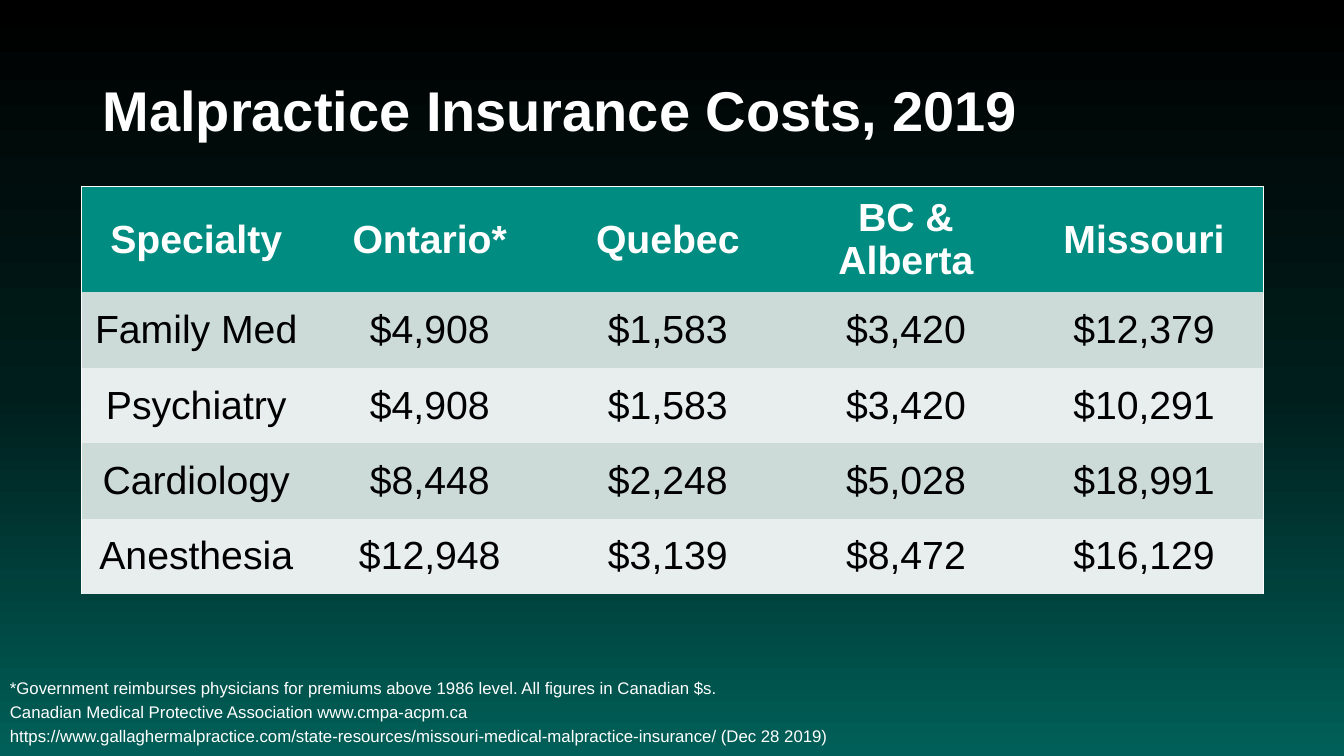
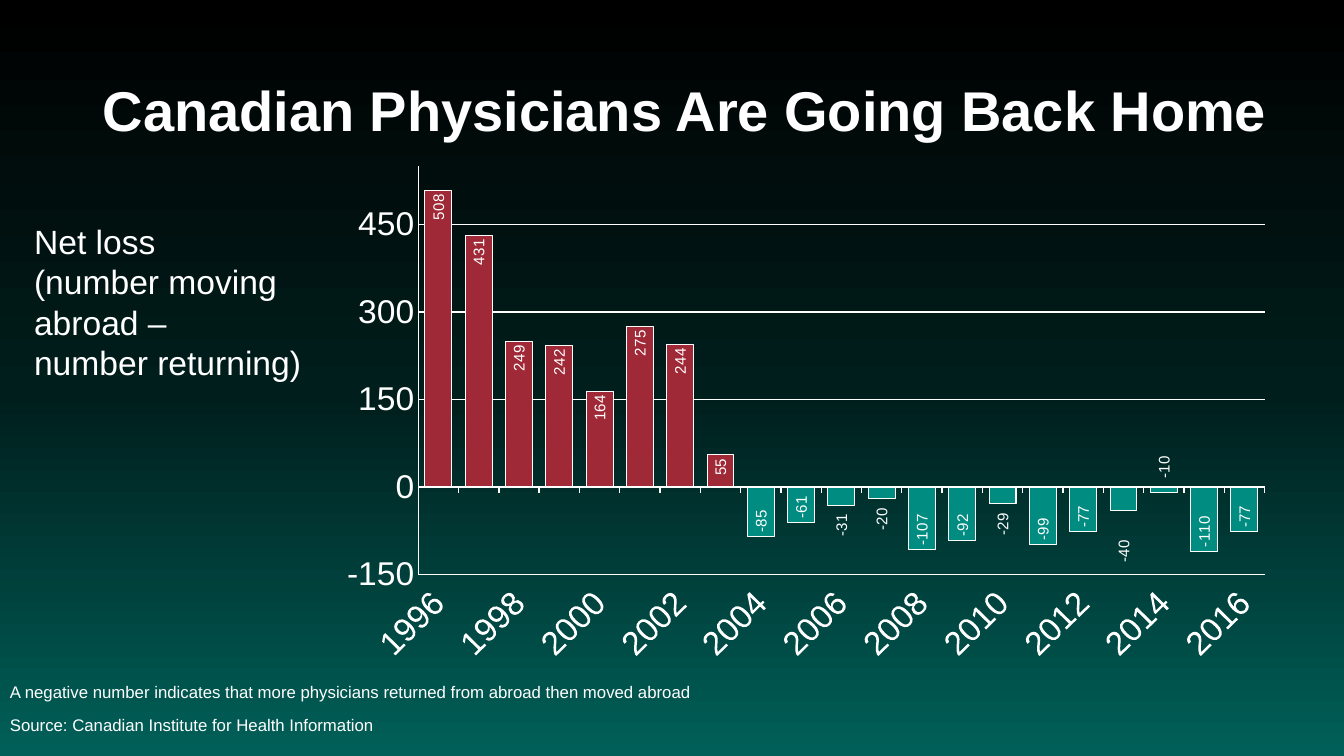
from copy import deepcopy
from dataclasses import dataclass, field
from typing import Any

from pptx import Presentation
from pptx.chart.data import CategoryChartData
from pptx.dml.color import RGBColor
from pptx.enum.chart import XL_CHART_TYPE, XL_LABEL_POSITION, XL_TICK_LABEL_POSITION, XL_TICK_MARK
from pptx.enum.text import MSO_ANCHOR, PP_ALIGN
from pptx.oxml import parse_xml
from pptx.oxml.ns import nsdecls, qn
from pptx.util import Cm, Pt

FONT = "Arial"
WHITE, BLACK = "FFFFFF", "000000"
TEAL, RED = "008C81", "9F2936"
BANDS = ("CCDAD8", "E7EEED")
STOPS = ((0, BLACK), (52, "001E1C"), (100, "006059"))
NO_STYLE = "{2D5ABB26-0587-4C30-8999-92F81FD0307C}"
NO_LEADS = (
    f'<c:extLst {nsdecls("c")}><c:ext uri="{{CE6537A1-D6FC-4f65-9D91-7224C49458BB}}" '
    'xmlns:c15="http://schemas.microsoft.com/office/drawing/2012/chart">'
    '<c15:showLeaderLines val="0"/></c:ext></c:extLst>')


@dataclass(frozen=True)
class Box:
    left: float
    top: float
    width: float
    height: float

    def lengths(self) -> tuple:
        return tuple(Cm(n) for n in (self.left, self.top, self.width, self.height))


@dataclass(frozen=True)
class Style:
    box: Box
    size: int
    bold: bool = False
    anchor: Any = MSO_ANCHOR.MIDDLE
    format: dict = field(default_factory=dict)


TITLE = Style(Box(2.34, 1.02, 30.96, 3.68), 40, True, format={"line_spacing": 0.9})
FOOT = Box(0, 16.71, 22.86, 2.34)
NOTE = Style(FOOT, 12, format={"line_spacing": 1.2})
SOURCE = Style(FOOT, 12, format={"line_spacing": 0.9, "space_before": Pt(10)})
SIDE = Style(Box(0.61, 5.44, 7.59, 4.37), 24, anchor=MSO_ANCHOR.TOP)
CHART = Box(8.56, 3.61, 23.83, 13.08)
PLOT = Box(10.54, 4.2, 21.33, 10.5)

COSTS = (
    ("Specialty", "Ontario*", "Quebec", "BC & Alberta", "Missouri"),
    ("Family Med", "$4,908", "$1,583", "$3,420", "$12,379"),
    ("Psychiatry", "$4,908", "$1,583", "$3,420", "$10,291"),
    ("Cardiology", "$8,448", "$2,248", "$5,028", "$18,991"),
    ("Anesthesia", "$12,948", "$3,139", "$8,472", "$16,129"),
)
LOSSES = (508, 431, 249, 242, 164, 275, 244, 55, -85, -61, -31, -20, -107,
          -92, -29, -99, -77, -40, -10, -110, -77)
DROPS = {10: 0.07, 11: 0.07, 14: 0.07, 17: 0.11, 18: -0.02}


def shade(code: str) -> RGBColor:
    return RGBColor.from_string(code)


def apply(target: Any, values: dict) -> None:
    for name, value in values.items():
        setattr(target, name, value)


def dress(font: Any, size: int, code: str = WHITE, bold: bool = False) -> None:
    apply(font, {"name": FONT, "size": Pt(size), "bold": bold})
    font.color.rgb = shade(code)


def paint(target: Any, code: str) -> None:
    target.fill.solid()
    target.fill.fore_color.rgb = shade(code)


def rule(line: Any, width: float = 0.75) -> None:
    line.color.rgb = shade(WHITE)
    line.width = Pt(width)


def backdrop(deck: Any) -> None:
    fill = deck.slide_master.background.fill
    fill.gradient()
    fill.gradient_angle = 270
    stops = deck.slide_master.element.find(".//" + qn("a:gsLst"))
    for stop in list(stops):
        stops.remove(stop)
    for place, code in STOPS:
        stops.append(parse_xml(
            f'<a:gs {nsdecls("a")} pos="{place * 1000}"><a:srgbClr val="{code}"/></a:gs>'))


def write(slide: Any, style: Style, *lines: str) -> None:
    frame = slide.shapes.add_textbox(*style.box.lengths()).text_frame
    apply(frame, {"word_wrap": True, "vertical_anchor": style.anchor})
    for spot, line in enumerate(lines):
        para = frame.add_paragraph() if spot else frame.paragraphs[0]
        apply(para, style.format)
        if not spot:
            para.space_before = Pt(0)
        run = para.add_run()
        run.text = line
        dress(run.font, style.size, bold=style.bold)


def edge(cell: Any, sides: str) -> None:
    props = cell._tc.get_or_add_tcPr()
    for spot, side in enumerate(sides):
        props.insert(spot, parse_xml(
            f'<a:ln{side} {nsdecls("a")} w="9525"><a:solidFill>'
            f'<a:srgbClr val="{WHITE}"/></a:solidFill></a:ln{side}>'))


def grid(slide: Any) -> None:
    rows, cols = len(COSTS), len(COSTS[0])
    box = Box(2.06, 4.7, 29.77, 10.27)
    table = slide.shapes.add_table(rows, cols, *box.lengths()).table
    apply(table, {"first_row": False, "horz_banding": False})
    table._tbl.tblPr.find(qn("a:tableStyleId")).text = NO_STYLE
    for c, col in enumerate(table.columns):
        col.width = Cm(6 if c else 5.77)
    for r, row in enumerate(table.rows):
        row.height = Cm(1.9 if r else 2.67)
        for c, cell in enumerate(row.cells):
            apply(cell, {"margin_left": 0, "margin_right": 0,
                         "vertical_anchor": MSO_ANCHOR.MIDDLE})
            paint(cell, BANDS[(r - 1) % 2] if r else TEAL)
            sides = ("" if c else "L") + ("R" if c == cols - 1 else "") + ("" if r else "T")
            edge(cell, sides)
            para = cell.text_frame.paragraphs[0]
            para.alignment = PP_ALIGN.CENTER
            run = para.add_run()
            run.text = COSTS[r][c]
            dress(run.font, 28, BLACK if r else WHITE, not r)


def layout(sizes: dict, inner: bool = False) -> Any:
    modes = ('<c:layoutTarget val="inner"/><c:xMode val="edge"/><c:yMode val="edge"/>'
             if inner else "")
    parts = "".join(f'<c:{key} val="{size}"/>' for key, size in sizes.items())
    return parse_xml(f'<c:layout {nsdecls("c")}><c:manualLayout>{modes}'
                     f'{parts}</c:manualLayout></c:layout>')


def label(series: Any) -> None:
    labels = series.data_labels
    apply(labels, {"show_value": True, "position": XL_LABEL_POSITION.INSIDE_END})
    dress(labels.font, 11)
    root = labels._element
    text = root.find(qn("c:txPr"))
    text.find(qn("a:bodyPr")).attrib.update({"rot": "-5400000", "vert": "horz"})
    for spot in DROPS:
        series.points[spot].data_label.position = XL_LABEL_POSITION.INSIDE_END
    for item, drop in zip(root.findall(qn("c:dLbl")), DROPS.values()):
        for old in item.findall(qn("c:txPr")):
            item.remove(old)
        item.find(qn("c:idx")).addnext(layout({"x": 0, "y": drop}))
        item.find(qn("c:dLblPos")).addprevious(deepcopy(text))
    for lead in root.findall(qn("c:showLeaderLines")):
        lead.set("val", "0")
    root.append(parse_xml(NO_LEADS))


def graph(slide: Any) -> None:
    data = CategoryChartData()
    data.categories = [str(1996 + n) for n in range(len(LOSSES))]
    data.add_series("Series 1", LOSSES)
    chart = slide.shapes.add_chart(
        XL_CHART_TYPE.COLUMN_CLUSTERED, *CHART.lengths(), data).chart
    apply(chart, {"has_legend": False, "has_title": False})
    dress(chart.font, 24)
    area = chart._chartSpace.find(".//" + qn("c:plotArea"))
    for old in area.findall(qn("c:layout")):
        area.remove(old)
    area.insert(0, layout({"x": (PLOT.left - CHART.left) / CHART.width,
                           "y": (PLOT.top - CHART.top) / CHART.height,
                           "w": PLOT.width / CHART.width,
                           "h": PLOT.height / CHART.height}, True))

    years, scale = chart.category_axis, chart.value_axis
    apply(years, {"tick_label_position": XL_TICK_LABEL_POSITION.LOW,
                  "major_tick_mark": XL_TICK_MARK.OUTSIDE,
                  "has_major_gridlines": False})
    apply(scale, {"minimum_scale": -150, "maximum_scale": 550, "major_unit": 150,
                  "major_tick_mark": XL_TICK_MARK.NONE, "has_major_gridlines": True})
    apply(scale.tick_labels, {"number_format": "#,##0", "number_format_is_linked": False})
    rule(years.format.line, 1)
    rule(scale.format.line)
    rule(scale.major_gridlines.format.line)
    for axis in (years, scale):
        dress(axis.tick_labels.font, 24)
    years._element.find(".//" + qn("a:bodyPr")).attrib.update(
        {"rot": "-2700000", "vert": "horz"})

    plot = chart.plots[0]
    apply(plot, {"gap_width": 50, "overlap": -5, "vary_by_categories": False})
    series = plot.series[0]
    series.invert_if_negative = False
    paint(series.format, TEAL)
    rule(series.format.line)
    for spot, loss in enumerate(LOSSES):
        if loss > 0:
            look = series.points[spot].format
            paint(look, RED)
            rule(look.line)
    label(series)


def main() -> None:
    deck = Presentation()
    apply(deck, {"slide_width": Cm(33.87), "slide_height": Cm(19.05)})
    backdrop(deck)
    blank = deck.slide_layouts[6]

    costs = deck.slides.add_slide(blank)
    write(costs, TITLE, "Malpractice Insurance Costs, 2019")
    write(costs, NOTE,
          "*Government reimburses physicians for premiums above 1986 level. "
          "All figures in Canadian $s.",
          "Canadian Medical Protective Association www.cmpa-acpm.ca",
          "https://www.gallaghermalpractice.com/state-resources/"
          "missouri-medical-malpractice-insurance/ (Dec 28 2019)")
    grid(costs)

    moves = deck.slides.add_slide(blank)
    write(moves, TITLE, "Canadian Physicians Are Going Back Home")
    write(moves, SOURCE,
          "A negative number indicates that more physicians returned from abroad "
          "then moved abroad",
          "Source: Canadian Institute for Health Information")
    write(moves, SIDE, "Net loss", "(number moving abroad –", "number returning)")
    graph(moves)

    deck.save("out.pptx")


if __name__ == "__main__":
    main()
